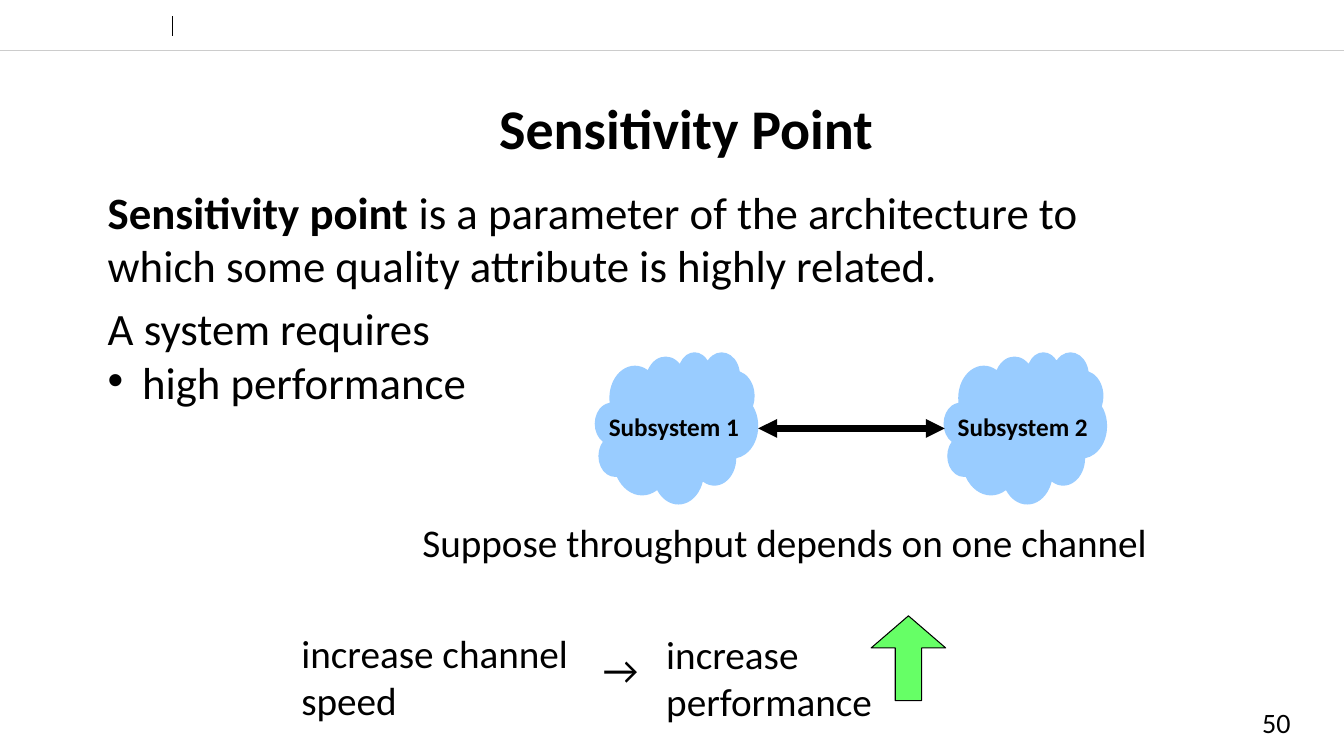
from lxml import etree
from pptx import Presentation
from pptx.dml.color import RGBColor
from pptx.enum.shapes import MSO_CONNECTOR, MSO_SHAPE
from pptx.enum.text import MSO_ANCHOR, PP_ALIGN
from pptx.oxml.ns import qn
from pptx.util import Pt

PX = 9144  # 100 px to the inch
W, H = 1333, 750
STRAIGHT = MSO_CONNECTOR.STRAIGHT
CLOUD, UP_ARROW = MSO_SHAPE.CLOUD_CALLOUT, MSO_SHAPE.UP_ARROW
MIDDLE, CENTER = MSO_ANCHOR.MIDDLE, PP_ALIGN.CENTER
BLACK, RULE, SKY, GREEN = "000000", "CCCCCC", "99CCFF", "66FF66"


def emu(*lengths):
    return [n * PX for n in lengths]


def color(hex_string):
    return RGBColor.from_string(hex_string)


def set_all(target, values):
    for name, value in values.items():
        setattr(target, name, value)


def add_text(s, box, paragraphs, size, wrap=True, anchor=None, **fmt):
    """Each paragraph is a list of (text, bold) runs."""
    tf = s.shapes.add_textbox(*emu(*box)).text_frame
    tf.word_wrap = wrap
    if anchor is not None:
        tf.vertical_anchor = anchor
    for i, runs in enumerate(paragraphs):
        p = tf.add_paragraph() if i else tf.paragraphs[0]
        set_all(p, fmt)
        for text, bold in runs:
            r = p.add_run()
            r.text = text
            set_all(r.font, {"name": "Calibri", "size": Pt(size), "bold": bold})
            r.font.color.rgb = color(BLACK)
    return tf


def add_line(s, start, end, hex_string, width, arrows=False):
    line = s.shapes.add_connector(STRAIGHT, *emu(*start, *end))
    line.line.color.rgb = color(hex_string)
    line.line.width = Pt(width)
    if arrows:
        ln = line.line._get_or_add_ln()
        for tag in ("a:headEnd", "a:tailEnd"):
            etree.SubElement(ln, qn(tag), type="triangle")
    etree.SubElement(line._element.spPr, qn("a:effectLst"))


def add_shape(s, kind, box, fill, adjustments, outline=None):
    sp = s.shapes.add_shape(kind, *emu(*box))
    sp.shadow.inherit = False
    sp.fill.solid()
    sp.fill.fore_color.rgb = color(fill)
    for i, value in enumerate(adjustments):
        sp.adjustments[i] = value
    if outline:
        sp.line.color.rgb = color(outline)
        sp.line.width = Pt(0.75)
    else:
        sp.line.fill.background()


def frame(s, x, y, w, h):
    # Header rules and page number
    add_line(s, (x, y + 50), (x + w, y + 50), RULE, 0.25)
    add_line(s, (x + 171, y + 16), (x + 171, y + 36), BLACK, 0.5)
    add_text(s, (x + w - 91, y + h - 50, 71, 33), [[("50", False)]], 20, anchor=MIDDLE)


def definition(s, x, y, w, h):
    # Title, definition and requirement list
    add_text(s, (x + 97, y, 973, 71), [[("Sensitivity Point", True)]], 40,
             anchor=MIDDLE, alignment=CENTER)
    add_text(s, (x, y + 87, w, 118), [[
        ("Sensitivity point", True),
        (" is a parameter of the architecture to which some quality attribute"
         " is highly related.", False)]], 32)
    tf = add_text(s, (x, y + 221, 465, h - 221),
                  [[("A system requires", False)], [("high performance", False)]],
                  32, line_spacing=0.6)
    item = tf.paragraphs[1]
    item.space_before = Pt(16)
    pPr = item._p.get_or_add_pPr()
    pPr.set("marL", str(34 * PX))
    pPr.set("indent", str(-34 * PX))
    etree.SubElement(pPr, qn("a:buFont"), typeface="Arial")
    etree.SubElement(pPr, qn("a:buChar"), char="•")


def subsystems(s, x, y, w, h):
    # Two clouds joined by a channel
    cloud_w, label_w = 162, 150
    right = x + w - cloud_w
    for number, left in enumerate((x, right), 1):
        add_shape(s, CLOUD, (left, y, cloud_w, h), SKY, (-0.046, -0.006))
        add_text(s, (left + 4, y + 54, label_w, 40),
                 [[(f"Subsystem {number}", True)]], 18, wrap=False)
    middle = y + 76
    add_line(s, (x + cloud_w, middle), (right + 1, middle), BLACK, 4.5, arrows=True)


def consequence(s, x, y, w, h):
    # Assumption and its effect on performance
    add_text(s, (x + 120, y, 748, 57),
             [[("Suppose throughput depends on one channel", False)]], 28, wrap=False)
    effect_top = y + h - 104
    for dx, dy, width, height, lines in (
            (0, 0, 288, 104, ("increase channel", "speed")),
            (299, 16, 59, 57, ("→",)),
            (362, 1, 226, 104, ("increase", "performance"))):
        add_text(s, (x + dx, effect_top + dy, width, height),
                 [[(line, False)] for line in lines], 28, wrap=False)
    add_shape(s, UP_ARROW, (x + w - 74, effect_top - 8, 74, 84), GREEN,
              (0.353, 0.431), BLACK)


def main():
    prs = Presentation()
    prs.slide_width, prs.slide_height = emu(W, H)
    s = prs.slides.add_slide(prs.slide_layouts[6])
    frame(s, 0, 0, W, H)
    definition(s, 97, 91, 1058, 323)
    subsystems(s, 590, 349, 508, 151)
    consequence(s, 289, 509, 649, 214)
    prs.save("out.pptx")


if __name__ == "__main__":
    main()
